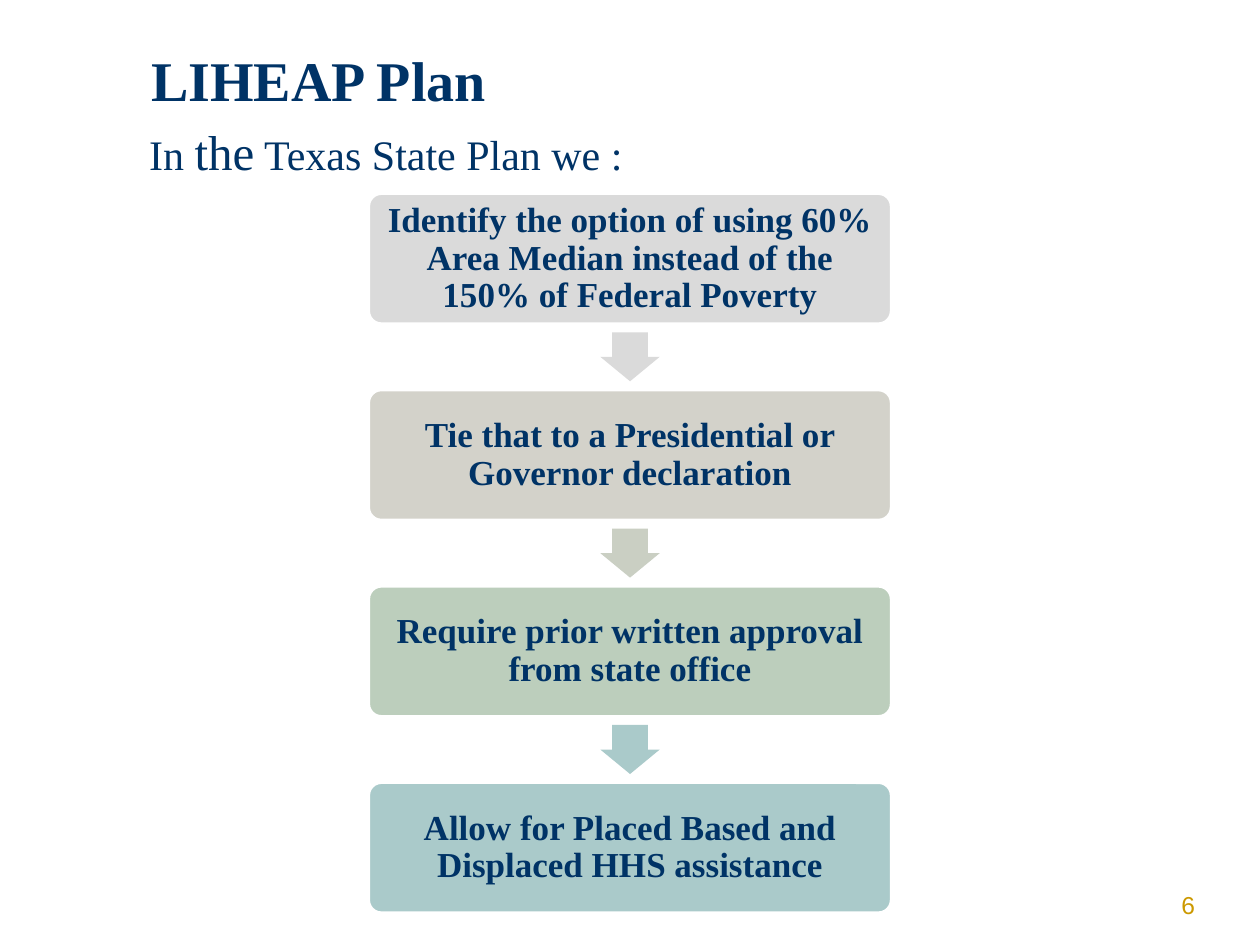
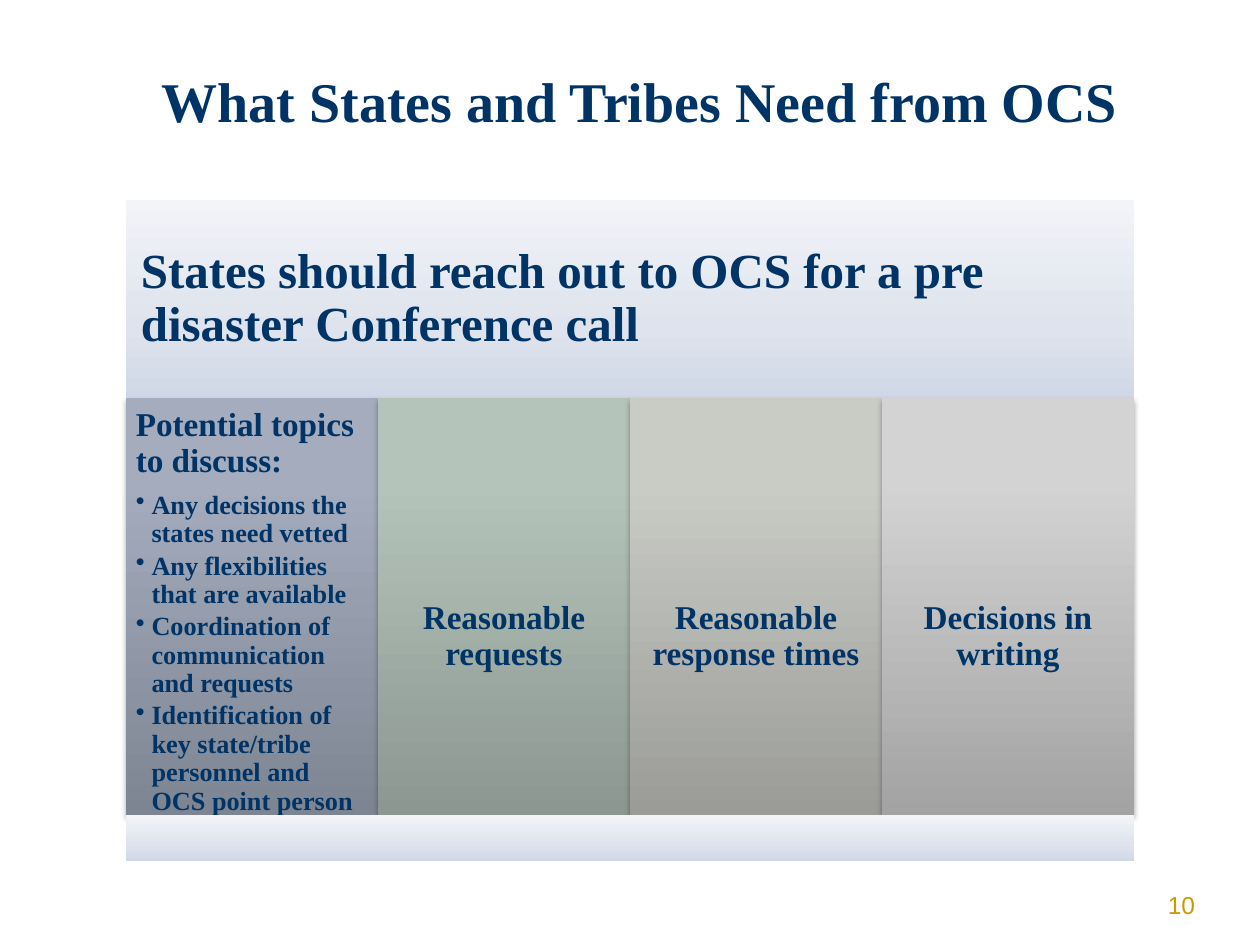
from lxml.etree import SubElement
from pptx import Presentation
from pptx.dml.color import RGBColor
from pptx.enum.shapes import MSO_SHAPE
from pptx.enum.text import MSO_ANCHOR, MSO_AUTO_SIZE, PP_ALIGN
from pptx.oxml.ns import qn
from pptx.util import Pt

NAVY, GOLD, WHITE = "003366", "CC9900", "FFFFFF"
SERIF, SANS = "Times New Roman", "Arial"
LEFT, MID, RIGHT = PP_ALIGN.LEFT, PP_ALIGN.CENTER, PP_ALIGN.RIGHT
BAND = [(0, "D0D8E7"), (35, "DEE3ED"), (100, "F2F4F8")]


def paint(code):
    return RGBColor.from_string(code)


def write(para, text, size=20, bold=False, color=NAVY, face=SERIF):
    run = para.add_run()
    run.text = text
    font = run.font
    font.size, font.bold, font.name = Pt(size), bold, face
    font.color.rgb = paint(color)


def hang(para, left, first, mark=None):
    """Set the indents and the bullet of a paragraph."""
    props = para._p.get_or_add_pPr()
    props.set("marL", str(Pt(left)))
    props.set("indent", str(Pt(first)))
    if mark:
        SubElement(props, qn("a:buChar"), char=mark)
    else:
        SubElement(props, qn("a:buNone"))


class Deck:
    def __init__(self):
        self.show = Presentation()
        self.show.slide_width, self.show.slide_height = Pt(720), Pt(540)
        self.slide = None

    def start(self, layout, title, spot, page):
        """Add a slide with its title and page number."""
        self.slide = self.show.slides.add_slide(self.show.slide_layouts[layout])
        head = self.slide.shapes.title
        self.place(head, *spot, 612, 90)
        frame = self.frame(head, (14.4, 3.6, 14.4, 3.6), MSO_ANCHOR.MIDDLE)
        self.para(frame, title, size=32, bold=True)
        note = self.slide.shapes.add_textbox(Pt(522), Pt(504), Pt(168), Pt(25))
        frame = self.frame(note, (7.2, 3.6, 7.2, 3.6), MSO_ANCHOR.BOTTOM)
        self.para(frame, page, align=RIGHT, size=14, color=GOLD, face=SANS)

    def place(self, shape, left, top, width, height):
        shape.left, shape.top = Pt(left), Pt(top)
        shape.width, shape.height = Pt(width), Pt(height)

    def frame(self, shape, pads, anchor=MSO_ANCHOR.TOP):
        frame = shape.text_frame
        frame.word_wrap = True
        frame.auto_size = MSO_AUTO_SIZE.NONE
        frame.vertical_anchor = anchor
        (frame.margin_left, frame.margin_top,
         frame.margin_right, frame.margin_bottom) = map(Pt, pads)
        return frame

    def para(self, frame, text, align=LEFT, pitch=None, after=0, mark=None, **form):
        """Fill the first paragraph, or add one if it is in use."""
        para = frame.paragraphs[0]
        if para.runs:
            para = frame.add_paragraph()
        if mark:
            hang(para, 9, -9, mark)
        para.alignment = align
        para.space_after = Pt(after)
        if pitch:
            para.line_spacing = pitch
        write(para, text, **form)

    def lead(self, parts, left, top, width, height):
        """Fill the body placeholder with runs of mixed size."""
        body = self.slide.placeholders[1]
        self.place(body, left, top, width, height)
        para = self.frame(body, (7.2, 3.6, 7.2, 3.6)).paragraphs[0]
        hang(para, 27, -27)
        for text, size in parts:
            write(para, text, size=size)

    def shape(self, kind, left, top, width, height, fill=None, line=None, adjust=()):
        shape = self.slide.shapes.add_shape(
            kind, Pt(left), Pt(top), Pt(width), Pt(height))
        shape.shadow.inherit = False
        if fill:
            shape.fill.solid()
            shape.fill.fore_color.rgb = paint(fill)
        if line:
            shape.line.color.rgb = paint(line)
            shape.line.width = Pt(2)
        else:
            shape.line.fill.background()
        for i, value in enumerate(adjust):
            shape.adjustments[i] = value
        return shape

    def panel(self, left, top, width, height, stops, shade=False):
        """Draw a plain box that fades from bottom to top."""
        shape = self.shape(MSO_SHAPE.RECTANGLE, left, top, width, height)
        shape.fill.gradient()
        props = shape._element.spPr
        grad = props.find(qn("a:gradFill"))
        for child in list(grad):
            grad.remove(child)
        chain = SubElement(grad, qn("a:gsLst"))
        for spot, code in stops:
            stop = SubElement(chain, qn("a:gs"), pos=str(spot * 1000))
            SubElement(stop, qn("a:srgbClr"), val=code)
        SubElement(grad, qn("a:lin"), ang="16200000", scaled="0")
        if shade:
            glow = SubElement(props.find(qn("a:effectLst")), qn("a:outerShdw"),
                              blurRad=str(Pt(3.1)), dist=str(Pt(1.8)),
                              dir="5400000", rotWithShape="0")
            tint = SubElement(glow, qn("a:srgbClr"), val="000000")
            SubElement(tint, qn("a:alpha"), val="35000")
        return shape


def plan(deck):
    deck.start(1, "LIHEAP Plan", (72, 0), "6")
    deck.lead([("In ", 24), ("the", 28), (" Texas State Plan we :", 24)],
              78, 66, 612, 42)
    # Steps, each with the colour of its box and of the arrow below
    steps = [
        ("Identify the option of using 60% Area Median instead of the "
         "150% of Federal Poverty", "DADADA", "DADADA"),
        ("Tie that to a Presidential or Governor declaration", "D3D2CA", "CACFC3"),
        ("Require prior written approval from state office", "BCCEBC", "AACACA"),
        ("Allow for Placed Based and Displaced HHS assistance", "AACACA", None),
    ]
    high, pitch = 74.8, 112.2
    for i, (text, fill, next_fill) in enumerate(steps):
        top = 110.4 + i * pitch
        box = deck.shape(MSO_SHAPE.ROUNDED_RECTANGLE, 210.5, top, 299, high,
                         fill, WHITE, [0.1])
        frame = deck.frame(box, (5.8,) * 4, MSO_ANCHOR.MIDDLE)
        deck.para(frame, text, MID, 0.9, size=20, bold=True)
        if next_fill:
            arrow = deck.shape(MSO_SHAPE.RIGHT_ARROW, 346, top + (high + pitch) / 2 - 17,
                               28, 34, next_fill, adjust=[0.6, 0.5])
            arrow.rotation = 90


def needs(deck):
    deck.start(5, "What States and Tribes Need from OCS", (78, 12), "10")
    # Top band
    band = deck.panel(72, 114, 576, 113.4, BAND)
    frame = deck.frame(band, (8.5,) * 4, MSO_ANCHOR.MIDDLE)
    deck.para(frame, "States should reach out to OCS for a pre disaster Conference call",
              pitch=0.9, size=28, bold=True)
    # Four columns
    cols = [
        ("Potential topics to discuss:", "7E8592", "A4ACBE", "A4ADBF"),
        ("Reasonable requests", "8B9790", "B5C4BB", "B5C5BC"),
        ("Reasonable response times", "9B9C98", "C9CBC5", "CACCC6"),
        ("Decisions in writing", "A3A3A3", "D3D3D3", "D4D4D4"),
    ]
    topics = [
        "Any decisions the states need vetted",
        "Any flexibilities that are available",
        "Coordination of communication and requests",
        "Identification of key state/tribe personnel and OCS point person",
    ]
    for i, (text, *codes) in enumerate(cols):
        col = deck.panel(72 + 144 * i, 227.4, 144, 238.3,
                         list(zip((0, 80, 100), codes)), shade=True)
        frame = deck.frame(col, (5.6, 116 if i else 5.6, 5.6, 5.6))
        deck.para(frame, text, MID if i else LEFT, 0.9, 0 if i else 7,
                  size=19, bold=True)
        if i == 0:
            for topic in topics:
                deck.para(frame, topic, pitch=0.9, after=2.25, mark="•",
                          size=15, bold=True)
    # Bottom band
    deck.panel(72, 465.7, 576, 26.5, BAND)


def main():
    deck = Deck()
    plan(deck)
    needs(deck)
    deck.show.save("out.pptx")


if __name__ == "__main__":
    main()
